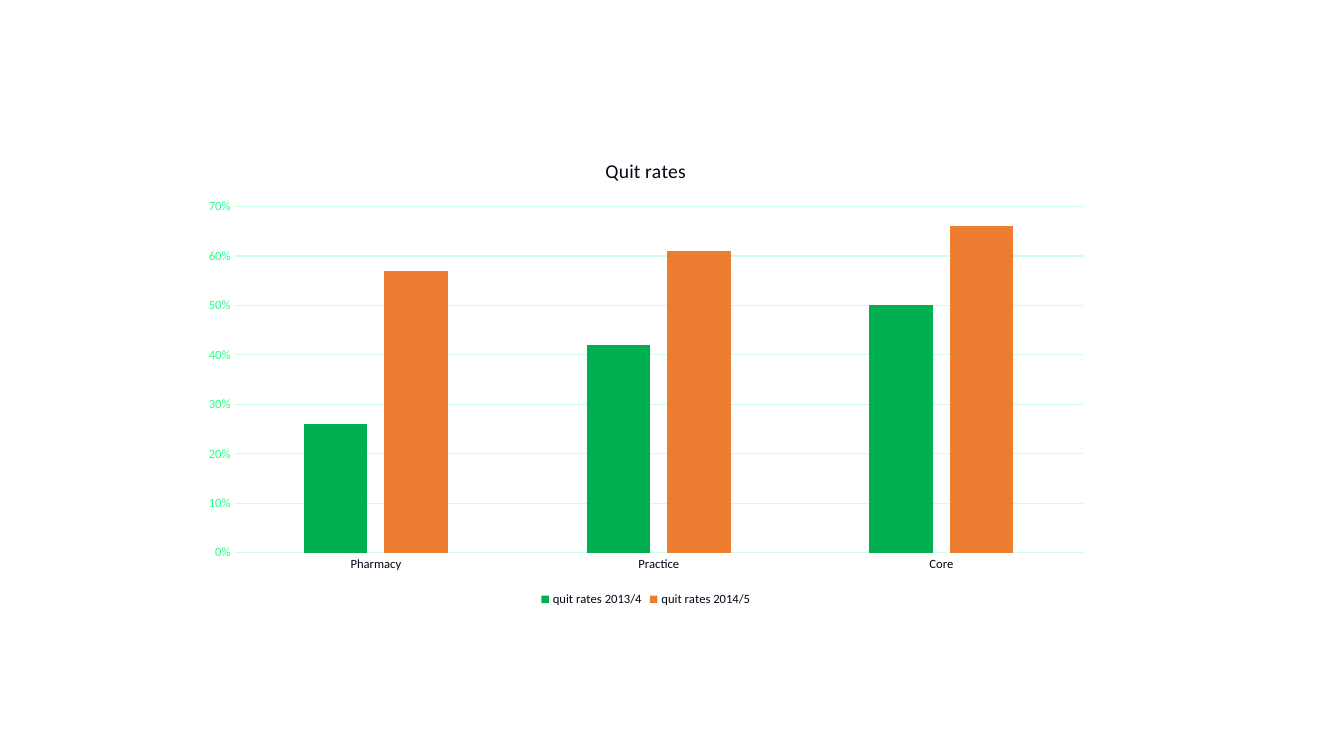
from dataclasses import dataclass

from pptx import Presentation
from pptx.chart.chart import Chart
from pptx.chart.data import CategoryChartData
from pptx.dml.color import RGBColor
from pptx.dml.fill import FillFormat
from pptx.dml.line import LineFormat
from pptx.enum.chart import XL_CHART_TYPE, XL_LEGEND_POSITION, XL_TICK_MARK
from pptx.slide import Slide
from pptx.text.text import Font
from pptx.util import Inches, Pt

COLUMNS = XL_CHART_TYPE.COLUMN_CLUSTERED
BOTTOM = XL_LEGEND_POSITION.BOTTOM
NO_TICKS = XL_TICK_MARK.NONE
BLANK_LAYOUT = 6
SLIDE_WIDTH, SLIDE_HEIGHT = Inches(13.33), Inches(7.5)
LEFT_SHARE, TOP_SHARE = 1.89 / 13.33, 1.38 / 7.5
WIDTH_SHARE, HEIGHT_SHARE = 9.03 / 13.33, 4.68 / 7.5
FONT_NAME = "Calibri"
TEXT_COLOR, SCALE_COLOR, GRID_COLOR = "000714", "26FF89", "CDFFE4"
CATEGORIES = ("Pharmacy", "Practice", "Core")


@dataclass(frozen=True)
class QuitRates:
    name: str
    values: tuple[float, ...]
    color: str


YEARS = (
    QuitRates("quit rates 2013/4", (0.26, 0.42, 0.5), "00B050"),
    QuitRates("quit rates 2014/5", (0.57, 0.61, 0.66), "ED7D31"),
)


def rgb(color: str) -> RGBColor:
    return RGBColor.from_string(color)


def style_font(font: Font, size: float, color: str) -> None:
    font.name = FONT_NAME
    font.size = Pt(size)
    font.bold = False
    font.color.rgb = rgb(color)


def style_fill(fill: FillFormat, color: str) -> None:
    fill.solid()
    fill.fore_color.rgb = rgb(color)


def style_line(line: LineFormat) -> None:
    line.width = Pt(0.75)
    style_fill(line.fill, GRID_COLOR)


def add_rates_chart(slide: Slide) -> Chart:
    data = CategoryChartData(number_format="0%")
    data.categories = CATEGORIES
    for year in YEARS:
        data.add_series(year.name, year.values)
    frame = slide.shapes.add_chart(
        COLUMNS,
        round(SLIDE_WIDTH * LEFT_SHARE),
        round(SLIDE_HEIGHT * TOP_SHARE),
        round(SLIDE_WIDTH * WIDTH_SHARE),
        round(SLIDE_HEIGHT * HEIGHT_SHARE),
        data,
    )
    return frame.chart


def style_columns(chart: Chart) -> None:
    plot = chart.plots[0]
    plot.gap_width = 219
    plot.overlap = -27
    plot.vary_by_categories = False
    for series, year in zip(plot.series, YEARS):
        style_fill(series.format.fill, year.color)


def style_axes(chart: Chart) -> None:
    category_axis, value_axis = chart.category_axis, chart.value_axis
    for axis, color in ((category_axis, TEXT_COLOR), (value_axis, SCALE_COLOR)):
        axis.major_tick_mark = NO_TICKS
        axis.minor_tick_mark = NO_TICKS
        style_font(axis.tick_labels.font, 9, color)
    style_line(category_axis.format.line)
    value_axis.format.line.fill.background()
    value_axis.has_major_gridlines = True
    style_line(value_axis.major_gridlines.format.line)
    value_axis.minimum_scale = 0
    value_axis.maximum_scale = 0.7
    value_axis.major_unit = 0.1
    value_axis.tick_labels.number_format = "0%"
    value_axis.tick_labels.number_format_is_linked = False


def add_title_and_legend(chart: Chart) -> None:
    chart.has_title = True
    chart.chart_title.include_in_layout = False
    run = chart.chart_title.text_frame.paragraphs[0].add_run()
    run.text = "Quit rates"
    style_font(run.font, 14, TEXT_COLOR)
    chart.has_legend = True
    chart.legend.position = BOTTOM
    chart.legend.include_in_layout = False
    style_font(chart.legend.font, 9, TEXT_COLOR)


def main() -> None:
    """Build the slide with the chart of quit rates."""
    presentation = Presentation()
    presentation.slide_width = SLIDE_WIDTH
    presentation.slide_height = SLIDE_HEIGHT
    slide = presentation.slides.add_slide(presentation.slide_layouts[BLANK_LAYOUT])
    style_fill(slide.background.fill, "FFFFFF")
    chart = add_rates_chart(slide)
    style_font(chart.font, 10, TEXT_COLOR)
    style_columns(chart)
    style_axes(chart)
    add_title_and_legend(chart)
    presentation.save("out.pptx")


if __name__ == "__main__":
    main()
